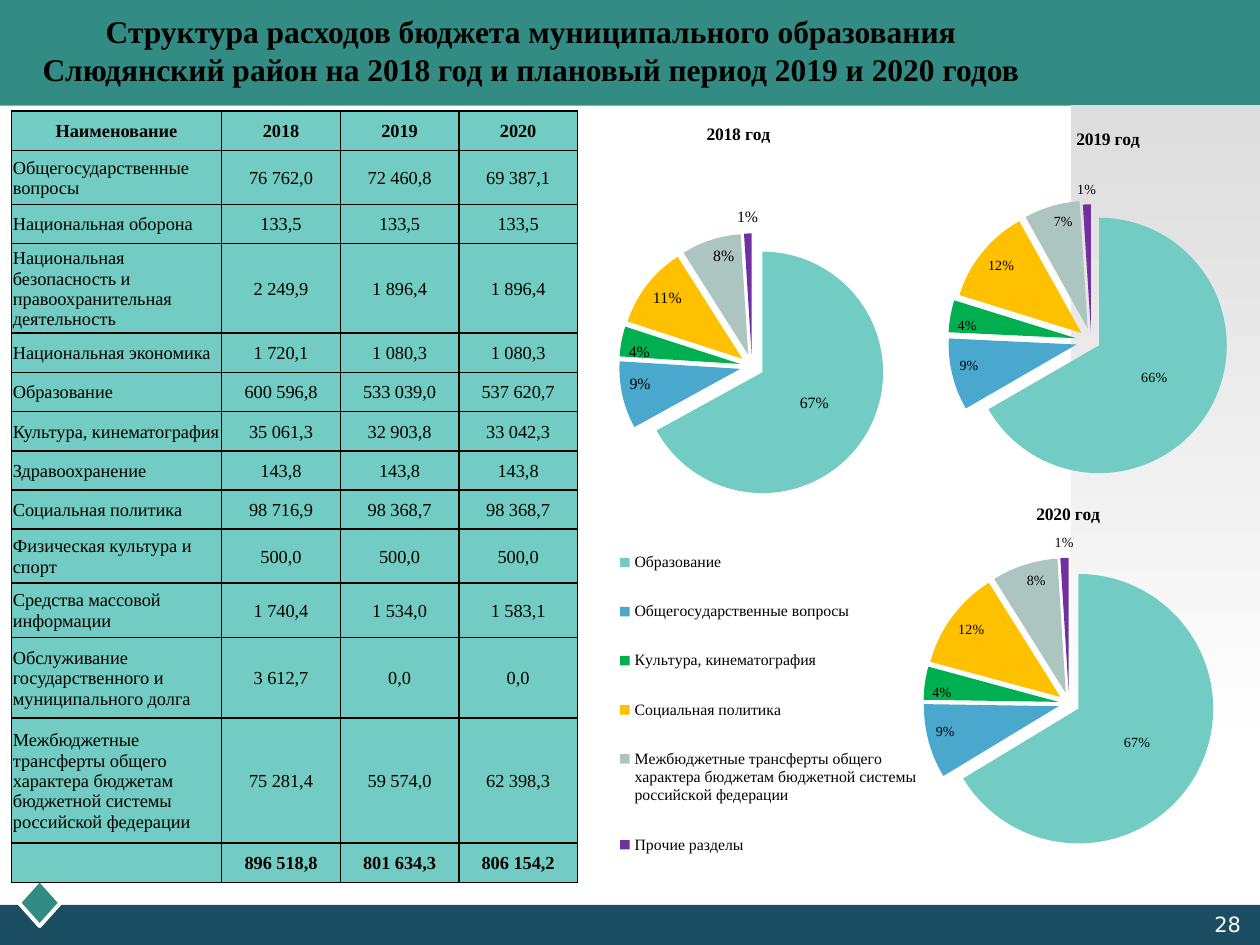
from lxml import etree
from pptx import Presentation
from pptx.chart.data import CategoryChartData
from pptx.dml.color import RGBColor
from pptx.enum.chart import XL_CHART_TYPE, XL_LABEL_POSITION, XL_LEGEND_POSITION
from pptx.enum.shapes import MSO_SHAPE
from pptx.enum.text import MSO_ANCHOR, PP_ALIGN
from pptx.oxml.ns import qn
from pptx.util import Cm, Pt

RECT, DIAMOND = MSO_SHAPE.RECTANGLE, MSO_SHAPE.DIAMOND
LEFT, CENTER, MIDDLE = PP_ALIGN.LEFT, PP_ALIGN.CENTER, MSO_ANCHOR.MIDDLE
PIE, BOTTOM = XL_CHART_TYPE.PIE, XL_LEGEND_POSITION.BOTTOM
IN_END, OUT_END, MID = (XL_LABEL_POSITION.INSIDE_END, XL_LABEL_POSITION.OUTSIDE_END,
                        XL_LABEL_POSITION.CENTER)
SERIF = "Times New Roman"
BLACK, WHITE, TEAL, NAVY, AQUA = "000000", "FFFFFF", "328C83", "1B4E63", "72CCC3"
SLICES = [AQUA, "4AA7CE", "00B050", "FFC000", "ADC5C1", "7030A0"]
LABEL_SPOTS = [MID, IN_END, IN_END, IN_END, IN_END, OUT_END]

TITLE = ["Структура расходов бюджета муниципального образования",
         "Слюдянский район на 2018 год и плановый период 2019 и 2020 годов"]
SECTIONS = ["Образование", "Общегосударственные вопросы", "Культура, кинематография",
            "Социальная политика",
            "Межбюджетные трансферты общего характера бюджетам бюджетной системы "
            "российской федерации",
            "Прочие разделы"]
BUDGET = [
    ("Наименование", "2018", "2019", "2020"),
    ("Общегосударственные вопросы", "76 762,0", "72 460,8", "69 387,1"),
    ("Национальная оборона", "133,5", "133,5", "133,5"),
    ("Национальная безопасность и правоохранительная деятельность",
     "2 249,9", "1 896,4", "1 896,4"),
    ("Национальная экономика", "1 720,1", "1 080,3", "1 080,3"),
    ("Образование", "600 596,8", "533 039,0", "537 620,7"),
    ("Культура, кинематография", "35 061,3", "32 903,8", "33 042,3"),
    ("Здравоохранение", "143,8", "143,8", "143,8"),
    ("Социальная политика", "98 716,9", "98 368,7", "98 368,7"),
    ("Физическая культура и спорт", "500,0", "500,0", "500,0"),
    ("Средства массовой информации", "1 740,4", "1 534,0", "1 583,1"),
    ("Обслуживание государственного и муниципального долга", "3 612,7", "0,0", "0,0"),
    (SECTIONS[4], "75 281,4", "59 574,0", "62 398,3"),
    ("", "896 518,8", "801 634,3", "806 154,2"),
]
COLS = [4.24, 2.39, 2.39, 2.39]
ROWS = [0.79, 1.09, 0.79, 1.68, *[0.79] * 5, 1.09, 1.09, 1.63, 2.52, 0.79]


def rgb(value):
    """Turn a hex string into a colour."""
    return RGBColor.from_string(value)


def cm(*values):
    """Turn numbers into centimetre lengths."""
    return [Cm(v) for v in values]


def sub(parent, tag, **attrs):
    """Add a child element with a prefixed tag."""
    return etree.SubElement(parent, qn(tag), attrs)


def place(parent, index, inner=False, **fractions):
    """Give a chart part a manual layout."""
    for old in parent.findall(qn("c:layout")):
        parent.remove(old)
    layout = parent.makeelement(qn("c:layout"))
    manual = sub(layout, "c:manualLayout")
    if inner:
        sub(manual, "c:layoutTarget", val="inner")
    for key in ("x", "y"):
        sub(manual, f"c:{key}Mode", val="edge")
    for key, value in fractions.items():
        sub(manual, f"c:{key}", val=str(value))
    parent.insert(index, layout)


def explode(before, percent):
    """Put an explosion in front of a chart element."""
    node = before.makeelement(qn("c:explosion"), {"val": str(percent)})
    before.addprevious(node)


class Deck:
    """Hold the style and the current slide."""

    def __init__(self, prs):
        """Start a title-only slide."""
        self.s = prs.slides.add_slide(prs.slide_layouts[5])

    def run(self, p, text, size, color=BLACK, bold=False, font=SERIF):
        """Add one styled run."""
        r = p.add_run()
        r.text = text
        r.font.size, r.font.bold, r.font.name = Pt(size), bold, font
        r.font.color.rgb = rgb(color)

    def shape(self, kind, box, fill=None, line=None):
        """Add a preset shape without shadow."""
        sp = self.s.shapes.add_shape(kind, *cm(*box))
        sp.shadow.inherit = False
        if fill:
            sp.fill.solid()
            sp.fill.fore_color.rgb = rgb(fill)
        if line:
            sp.line.color.rgb, sp.line.width = rgb(line), Pt(2.25)
        else:
            sp.line.fill.background()
        return sp

    def gradient(self, box, colors):
        """Add a rectangle that fades downwards."""
        sp = self.shape(RECT, box)
        sp.fill.gradient()
        sp.fill.gradient_angle = 270
        for stop, color in zip(sp.fill.gradient_stops, colors):
            stop.color.rgb = rgb(color)

    def title(self, box, lines):
        """Move and format the title above the header band."""
        sp = self.s.shapes.title
        self.s.shapes._spTree.append(sp._element)
        sp.left, sp.top, sp.width, sp.height = cm(*box)
        tf = sp.text_frame
        tf.word_wrap, tf.vertical_anchor = True, MIDDLE
        p = tf.paragraphs[0]
        p.alignment = CENTER
        for i, line in enumerate(lines):
            if i:
                p.add_line_break()
            self.run(p, line, 18, bold=True)

    def text(self, box, text, align, *style):
        """Add a one-line text box."""
        tf = self.s.shapes.add_textbox(*cm(*box)).text_frame
        tf.word_wrap = True
        p = tf.paragraphs[0]
        p.alignment = align
        self.run(p, text, *style)

    def cell(self, cell, text, align, bold):
        """Fill and border one table cell."""
        cell.margin_left = cell.margin_right = cell.margin_top = Cm(0.03)
        cell.margin_bottom = 0
        cell.vertical_anchor = MIDDLE
        for side in "LRTB":
            ln = sub(cell._tc.get_or_add_tcPr(), f"a:ln{side}", w=str(Pt(1)))
            sub(sub(ln, "a:solidFill"), "a:srgbClr", val=BLACK)
        cell.fill.solid()
        cell.fill.fore_color.rgb = rgb(AQUA)
        p = cell.text_frame.paragraphs[0]
        p.alignment = align
        self.run(p, text, 10.5, bold=bold)

    def table(self, left, top, cols, heights, rows):
        """Add the budget table."""
        box = cm(left, top, sum(cols), sum(heights))
        table = self.s.shapes.add_table(len(rows), len(cols), *box).table
        for col, width in zip(table.columns, cols):
            col.width = Cm(width)
        for i, row in enumerate(rows):
            table.rows[i].height = Cm(heights[i])
            edge = i in (0, len(rows) - 1)
            for j, text in enumerate(row):
                self.cell(table.cell(i, j), text, CENTER if j or edge else LEFT, edge)

    def pie(self, box, name, values, size, title, plot, burst, bursts, legend=None):
        """Add an exploded pie with percent labels."""
        data = CategoryChartData(number_format='0"%"')
        data.categories = SECTIONS
        data.add_series(name, values)
        chart = self.s.shapes.add_chart(PIE, *cm(*box), data).chart
        chart.font.size, chart.font.name = Pt(size), SERIF
        chart.font.color.rgb = rgb(BLACK)
        chart.has_title = True
        self.run(chart.chart_title.text_frame.paragraphs[0], name, 10, bold=True)
        place(chart.chart_title._element, 1, x=title[0], y=title[1])
        chart.has_legend = bool(legend)
        if legend:
            chart.legend.position, chart.legend.include_in_layout = BOTTOM, False
            chart.legend.font.size, chart.legend.font.name = Pt(9), SERIF
            place(chart.legend._element, 1, **dict(zip("xywh", legend)))
        pie = chart.plots[0]
        pie.vary_by_categories = True
        place(pie._element.getparent(), 0, inner=True, **dict(zip("xywh", plot)))
        series = pie.series[0]
        labels = series.data_labels
        labels.show_value, labels.number_format = True, '0"%"'
        labels.number_format_is_linked = False
        for i, (color, spot) in enumerate(zip(SLICES, LABEL_SPOTS)):
            point = series.points[i]
            point.format.fill.solid()
            point.format.fill.fore_color.rgb = rgb(color)
            point.data_label.position = spot
        slices = series._element.findall(qn("c:dPt"))
        explode(slices[0], burst)
        for node, percent in zip(slices, bursts):
            explode(node.find(qn("c:spPr")), percent)


def main():
    """Build the budget slide."""
    prs = Presentation()
    prs.slide_width, prs.slide_height = cm(25.4, 19.05)
    deck = Deck(prs)
    deck.shape(RECT, (0, 0, 25.4, 2.13), TEAL)
    deck.shape(RECT, (0, 18.24, 25.4, 0.81), NAVY)
    deck.shape(DIAMOND, (0.38, 17.73, 0.84, 0.94), TEAL, WHITE)
    deck.gradient((21.59, 2.11, 3.81, 13.34), ["DDDDDD", WHITE])
    deck.title((0, 0, 21.41, 2.01), TITLE)
    deck.text((24.1, 18.26, 1.3, 0.79), "28", CENTER, 12, WHITE, False, "DejaVu Sans")
    deck.pie((11.96, 1.91, 13.06, 16.59), "2018 год", [67, 9, 4, 11, 8, 1], 9,
             (0.17, 0.03), (0.04, 0, 0.41, 0.66), 10, [10] * 6, (0.04, 0.52, 0.46, 0.44))
    deck.pie((18.01, 2.24, 7.39, 9.09), "2019 год", [66, 9, 4, 12, 7, 1], 8,
             (0.49, 0.03), (0.08, 0.1, 0.92, 0.82), 32, [7, 12, 12, 10, 10, 7])
    deck.pie((17.78, 8.79, 7.62, 9.14), "2020 год", [67, 9, 4, 12, 8, 1], 8,
             (0.4, 0.14), (0.11, 0.23, 0.77, 0.72), 8, [8] * 6)
    deck.table(0.23, 2.24, COLS, ROWS, BUDGET)
    prs.save("out.pptx")


if __name__ == "__main__":
    main()
